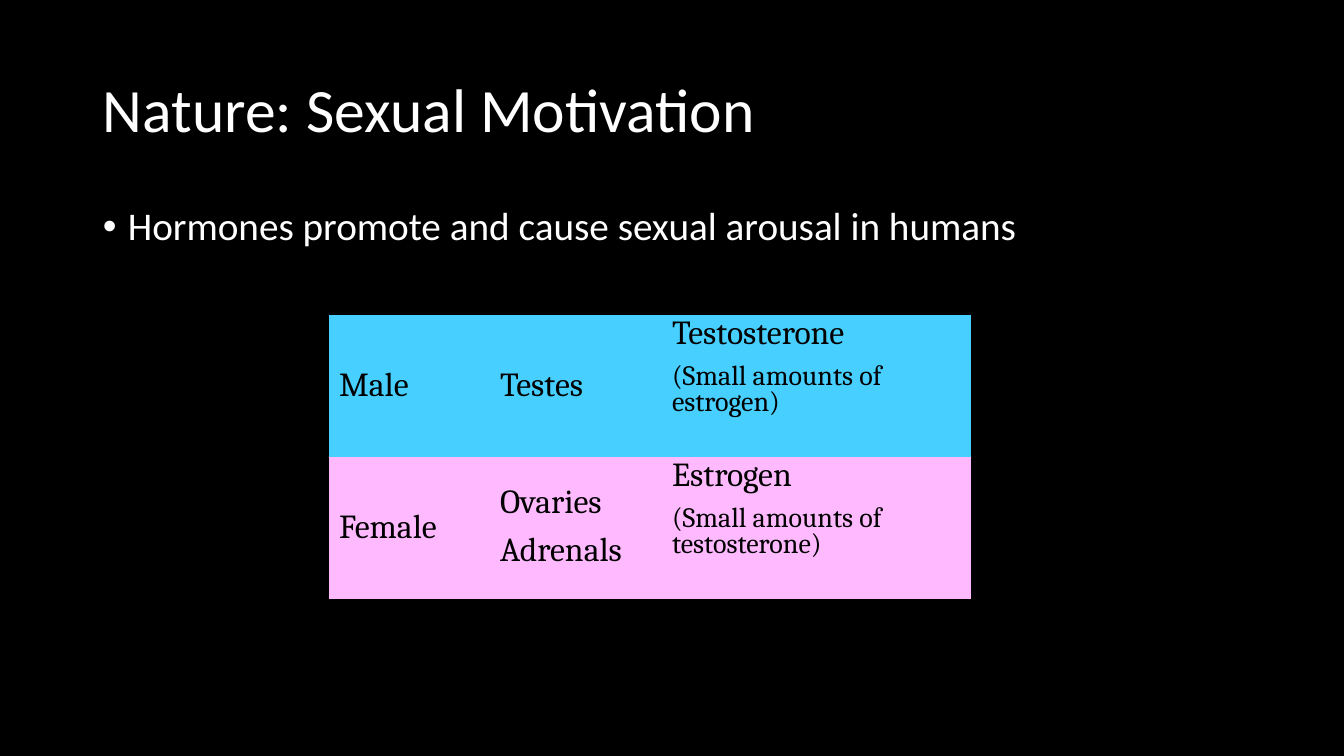
import pptx
import pptx.dml.color
import pptx.enum.text
import pptx.oxml
import pptx.oxml.ns
import pptx.util

BLACK = pptx.dml.color.RGBColor(0x00, 0x00, 0x00)
WHITE = pptx.dml.color.RGBColor(0xFF, 0xFF, 0xFF)
MALE_BLUE = pptx.dml.color.RGBColor(0x47, 0xCF, 0xFF)
FEMALE_PINK = pptx.dml.color.RGBColor(0xFF, 0xB9, 0xFF)

MIDDLE = pptx.enum.text.MSO_ANCHOR.MIDDLE
TOP = pptx.enum.text.MSO_ANCHOR.TOP
PLAIN_TABLE = "{2D5ABB26-0587-4C30-8999-92F81FD0307C}"  # no style, no grid

PX = 914400 / 100.8


def px(length):
    return pptx.util.Emu(round(length * PX))


def write(para, text, *, size, font, color, line=1.0, before=0):
    span = para.add_run()
    span.text = text
    span.font.size = pptx.util.Pt(size)
    span.font.name = font
    span.font.color.rgb = color
    para.line_spacing = line
    para.space_before = pptx.util.Pt(before)


class SlideBuilder:
    heading_font = "Calibri"
    table_font = "Cambria"

    def __init__(self, page):
        self.page = page
        page.background.fill.solid()
        page.background.fill.fore_color.rgb = BLACK

    def text(self, text, left, top, width, height, *, size, anchor=TOP, bullet=False):
        box = self.page.shapes.add_textbox(px(left), px(top), px(width), px(height))
        frame = box.text_frame
        frame.word_wrap = True
        frame.vertical_anchor = anchor
        para = frame.paragraphs[0]
        write(para, text, size=size, font=self.heading_font, color=WHITE,
              line=0.9, before=10 if bullet else 0)
        if bullet:
            self.bullet(para)

    def bullet(self, para):
        properties = para._p.get_or_add_pPr()
        properties.set("marL", str(px(25)))
        properties.set("indent", str(px(-25)))
        for tag, key, value in (("buFont", "typeface", "Arial"), ("buChar", "char", "•")):
            mark = pptx.oxml.parse_xml(f'<a:{tag} {pptx.oxml.ns.nsdecls("a")} {key}="{value}"/>')
            properties.append(mark)

    def table(self, rows, left, top, widths, row_height):
        frame = self.page.shapes.add_table(
            len(rows), len(widths), px(left), px(top),
            px(sum(widths)), px(row_height * len(rows)))
        table = frame.table
        table.first_row = table.horz_banding = False
        table._tbl.tblPr.find(pptx.oxml.ns.qn("a:tableStyleId")).text = PLAIN_TABLE
        for column, width in zip(table.columns, widths):
            column.width = px(width)
        for row, (fill, contents) in zip(table.rows, rows):
            row.height = px(row_height)
            for cell, (anchor, lines) in zip(row.cells, contents):
                self.cell(cell, fill, anchor, lines)

    def cell(self, cell, fill, anchor, lines):
        cell.fill.solid()
        cell.fill.fore_color.rgb = fill
        cell.vertical_anchor = anchor
        frame = cell.text_frame
        for index, (text, size) in enumerate(lines):
            para = frame.add_paragraph() if index else frame.paragraphs[0]
            # Stacked lines sit tighter, with half a line between them
            write(para, text, size=size, font=self.table_font, color=BLACK,
                  line=0.8 if len(lines) > 1 else 1.0, before=size / 2)


def main():
    deck = pptx.Presentation()
    deck.slide_width, deck.slide_height = px(1344), px(756)
    slide = SlideBuilder(deck.slides.add_slide(deck.slide_layouts[6]))

    # Title and statement
    slide.text("Nature: Sexual Motivation", 93, 40, 1159, 146, size=44, anchor=MIDDLE)
    slide.text("Hormones promote and cause sexual arousal in humans",
               93, 202, 1159, 480, size=28, bullet=True)

    # Sex, glands and hormones
    rows = [
        (MALE_BLUE, [
            (MIDDLE, [("Male", 24)]),
            (MIDDLE, [("Testes", 24)]),
            (TOP, [("Testosterone", 24), ("(Small amounts of estrogen)", 20)]),
        ]),
        (FEMALE_PINK, [
            (MIDDLE, [("Female", 24)]),
            (MIDDLE, [("Ovaries", 24), ("Adrenals", 24)]),
            (TOP, [("Estrogen", 24), ("(Small amounts of testosterone)", 20)]),
        ]),
    ]
    slide.table(rows, 329, 315, (161, 172, 309), 142)

    deck.save("out.pptx")


if __name__ == "__main__":
    main()
